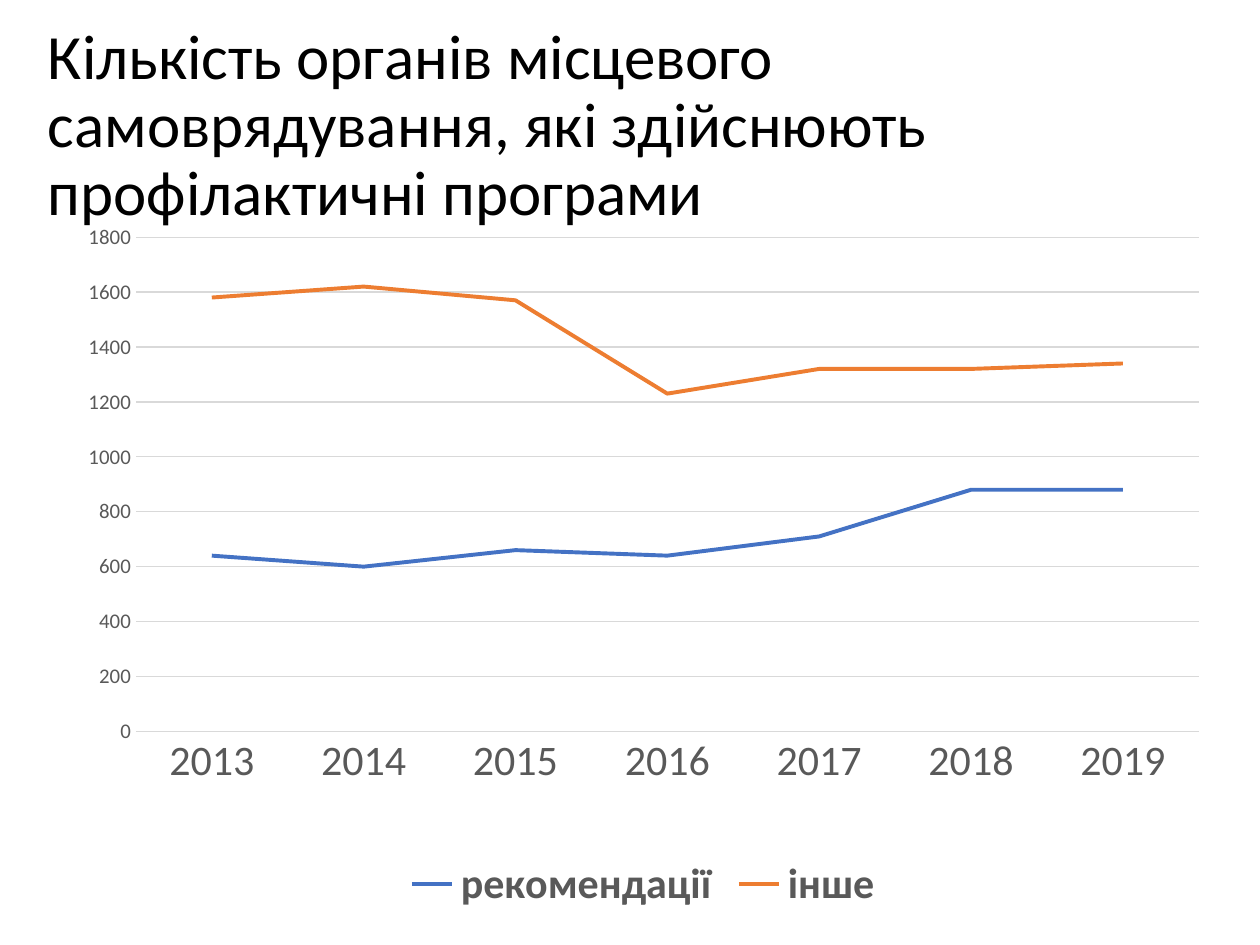
from typing import NamedTuple

from lxml import etree
from pptx import Presentation
from pptx.chart.data import CategoryChartData
from pptx.dml.color import RGBColor
from pptx.enum.chart import XL_CHART_TYPE, XL_LEGEND_POSITION, XL_TICK_MARK
from pptx.enum.text import MSO_ANCHOR, MSO_AUTO_SIZE, PP_ALIGN
from pptx.oxml.ns import qn
from pptx.util import Inches, Pt

LINE = XL_CHART_TYPE.LINE
BOTTOM = XL_LEGEND_POSITION.BOTTOM
NO_TICK = XL_TICK_MARK.NONE
MIDDLE = MSO_ANCHOR.MIDDLE
NO_AUTOFIT = MSO_AUTO_SIZE.NONE
LEFT = PP_ALIGN.LEFT

BLACK = RGBColor(0x00, 0x00, 0x00)
GRAY = RGBColor(0x59, 0x59, 0x59)
GRID = RGBColor(0xD9, 0xD9, 0xD9)
BLUE = RGBColor(0x44, 0x72, 0xC4)
ORANGE = RGBColor(0xED, 0x7D, 0x31)
FONT = "Calibri"


class Box(NamedTuple):
    """Place as shares of the enclosing area."""
    x: float
    y: float
    w: float
    h: float


class Series(NamedTuple):
    name: str
    values: tuple[int, ...]
    color: RGBColor


TITLE = "Кількість органів місцевого самоврядування, які здійснюють профілактичні програми"
TITLE_BOX = Box(0.028, 0.023, 0.903, 0.224)
CHART_BOX = Box(0.053, 0.228, 0.915, 0.744)
PLOT_BOX = Box(0.06, 0.031, 0.922, 0.703)
YEARS = [str(year) for year in range(2013, 2020)]
SERIES = [
    Series("рекомендації", (640, 600, 660, 640, 710, 880, 880), BLUE),
    Series("інше", (1580, 1620, 1570, 1230, 1320, 1320, 1340), ORANGE),
]


def on_slide(prs, box: Box) -> tuple[int, int, int, int]:
    w, h = prs.slide_width, prs.slide_height
    return int(box.x * w), int(box.y * h), int(box.w * w), int(box.h * h)


def style_font(font, size: float, color: RGBColor, bold: bool = False) -> None:
    font.name, font.size, font.bold = FONT, Pt(size), bold
    font.color.rgb = color


def style_line(line, color: RGBColor, width: float) -> None:
    line.color.rgb = color
    line.width = Pt(width)


def set_plot_layout(chart, box: Box) -> None:
    """Pin the inner plot area to a share of the chart."""
    area = chart._chartSpace.chart.plotArea
    for old in area.findall(qn("c:layout")):
        area.remove(old)
    layout = etree.Element(qn("c:layout"))
    manual = etree.SubElement(layout, qn("c:manualLayout"))
    settings = [("layoutTarget", "inner"), ("xMode", "edge"), ("yMode", "edge")]
    settings += [(key, str(share)) for key, share in box._asdict().items()]
    for tag, value in settings:
        etree.SubElement(manual, qn(f"c:{tag}")).set("val", value)
    area.insert(0, layout)


def add_title(prs, slide) -> None:
    s = slide.shapes.title
    s.left, s.top, s.width, s.height = on_slide(prs, TITLE_BOX)
    tf = s.text_frame
    tf.text = TITLE
    tf.word_wrap = True
    tf.auto_size = NO_AUTOFIT
    tf.vertical_anchor = MIDDLE
    p = tf.paragraphs[0]
    p.alignment = LEFT
    p.line_spacing = 0.9
    style_font(p.runs[0].font, 36, BLACK)


def add_line_chart(prs, slide) -> None:
    data = CategoryChartData()
    data.categories = YEARS
    for item in SERIES:
        data.add_series(item.name, item.values)
    chart = slide.shapes.add_chart(LINE, *on_slide(prs, CHART_BOX), data).chart
    chart.has_title = False
    style_font(chart.font, 10, BLACK)
    set_plot_layout(chart, PLOT_BOX)

    plot = chart.plots[0]
    plot.vary_by_categories = False
    for line, item in zip(plot.series, SERIES):
        line.smooth = False
        style_line(line.format.line, item.color, 2.25)

    for axis, size in ((chart.category_axis, 24), (chart.value_axis, 11.9)):
        axis.major_tick_mark = axis.minor_tick_mark = NO_TICK
        style_font(axis.tick_labels.font, size, GRAY)
    style_line(chart.category_axis.format.line, GRID, 0.75)
    values = chart.value_axis
    values.minimum_scale, values.maximum_scale, values.major_unit = 0, 1800, 200
    values.format.line.fill.background()
    style_line(values.major_gridlines.format.line, GRID, 0.75)

    chart.has_legend = True
    chart.legend.position = BOTTOM
    chart.legend.include_in_layout = False
    style_font(chart.legend.font, 24, GRAY, bold=True)


def main() -> None:
    prs = Presentation()
    prs.slide_width, prs.slide_height = Inches(10), Inches(7.5)
    slide = prs.slides.add_slide(prs.slide_layouts.get_by_name("Title Only"))
    add_title(prs, slide)
    add_line_chart(prs, slide)
    prs.save("out.pptx")


if __name__ == "__main__":
    main()
